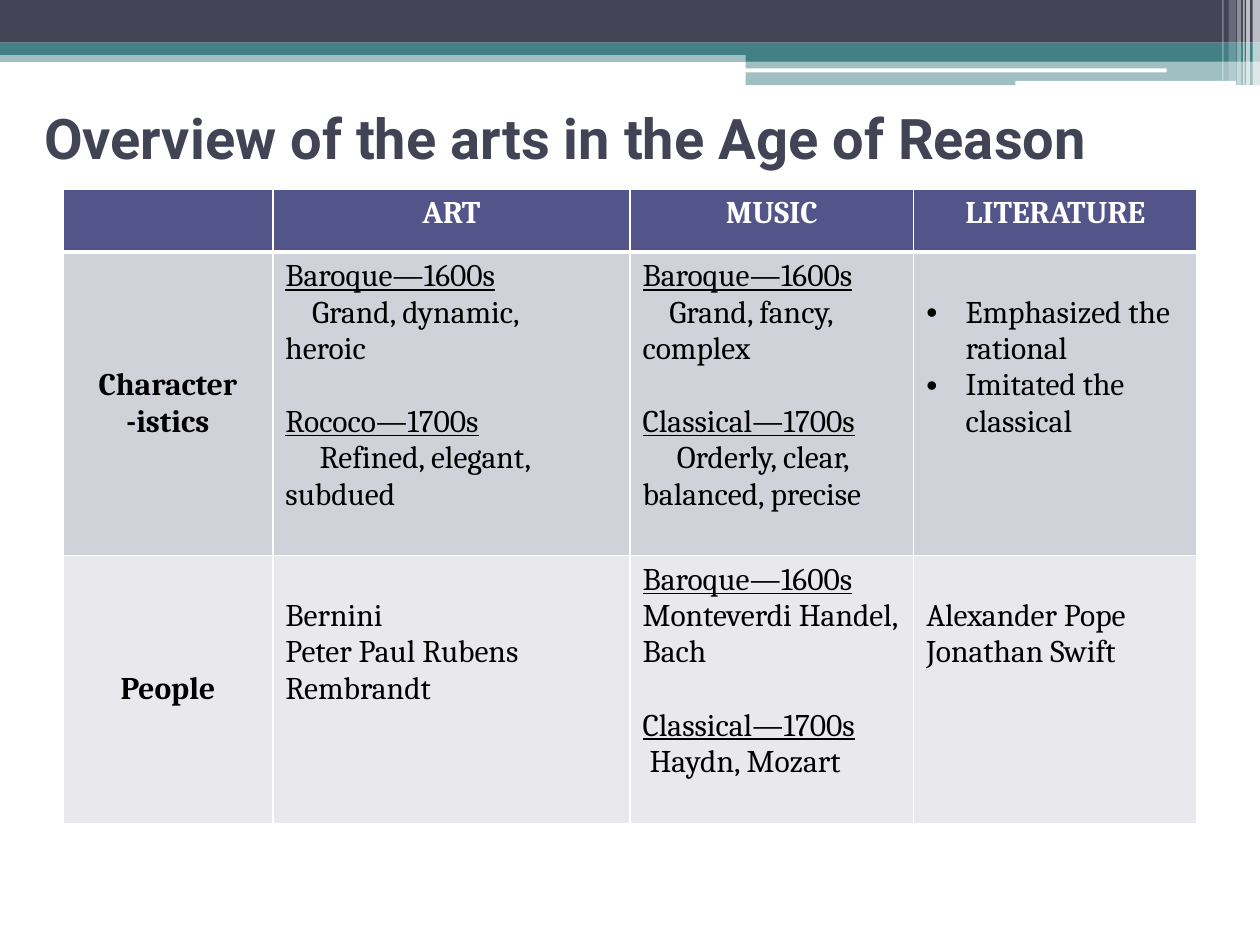
from dataclasses import dataclass

from lxml.etree import SubElement as Sub
from pptx import Presentation as Deck
from pptx.dml.color import RGBColor as Rgb
from pptx.enum.shapes import MSO_SHAPE as Shape
from pptx.enum.text import MSO_ANCHOR as Anchor, PP_ALIGN as Align
from pptx.oxml.ns import qn
from pptx.util import Cm, Pt


@dataclass(frozen=True)
class Theme:
    dark: str = "424456"
    teal: str = "438086"
    head: str = "53548A"
    band: str = "D1D1DA"
    pale: str = "E9E9ED"
    white: str = "FFFFFF"
    black: str = "000000"
    sans: str = "Roboto"
    serif: str = "Cambria"
    big: int = 32
    body: int = 18
    gap: int = 21


@dataclass(frozen=True)
class Para:
    text: str
    under: bool = False
    gap: bool = False
    first: float = 0
    dot: bool = False


@dataclass(frozen=True)
class Box:
    paras: tuple = ()
    bold: bool = False
    drop: bool = False


class Maker:
    """Draw each kind of element on the current slide in one style."""

    def __init__(self, theme, slide):
        self.theme = theme
        self.slide = slide

    def bar(self, x, y, w, h, tint, alpha=100, form=Shape.RECTANGLE):
        bar = self.slide.shapes.add_shape(form, Cm(x), Cm(y), Cm(w), Cm(h))
        bar.shadow.inherit = False
        bar.line.fill.background()
        bar.fill.solid()
        bar.fill.fore_color.rgb = Rgb.from_string(tint)
        if alpha < 100:
            hue = bar.fill._xPr.find(".//" + qn("a:srgbClr"))
            Sub(hue, qn("a:alpha"), val=str(alpha * 1000))

    def words(self, para, text, face, size, tint, bold=False, under=False):
        for i, line in enumerate(text.split("\n")):
            if i:
                para.add_line_break()
            run = para.add_run()
            run.text = line
            font = run.font
            font.name, font.size = face, Pt(size)
            font.bold, font.underline = bold, under
            font.color.rgb = Rgb.from_string(tint)

    def title(self, x, y, w, h, text):
        frame = self.slide.shapes.add_textbox(Cm(x), Cm(y), Cm(w), Cm(h)).text_frame
        frame.word_wrap = True
        frame.vertical_anchor = Anchor.MIDDLE
        look = self.theme
        self.words(frame.paragraphs[0], text, look.sans, look.big, look.dark, True)

    def edge(self, cell, top, base):
        props = cell._tc.get_or_add_tcPr()
        for side, width in (("L", 1), ("R", 1), ("T", top), ("B", base)):
            line = Sub(props, qn("a:ln" + side), w=str(Pt(width)))
            Sub(Sub(line, qn("a:solidFill")), qn("a:srgbClr"), val=self.theme.white)

    def cell(self, cell, box, fill, tint):
        look = self.theme
        cell.fill.solid()
        cell.fill.fore_color.rgb = Rgb.from_string(fill)
        if box.drop:
            cell.margin_top = Cm(0.86)
        if box.bold and tint == look.black:
            cell.vertical_anchor = Anchor.MIDDLE
        frame = cell.text_frame
        for i, item in enumerate(box.paras):
            para = frame.add_paragraph() if i else frame.paragraphs[0]
            props = para._p.get_or_add_pPr()
            if item.dot:
                props.set("marL", str(Cm(0.79)))
                props.set("indent", str(Cm(-0.79)))
                Sub(props, qn("a:buFont"), typeface="Arial")
                Sub(props, qn("a:buChar"), char="•")
            elif item.first:
                props.set("indent", str(Cm(item.first)))
            if item.gap:
                para.space_before = Pt(look.gap)
            para.alignment = Align.CENTER if box.bold else Align.LEFT
            self.words(para, item.text, look.serif, look.body, tint, box.bold, item.under)

    def table(self, x, y, wide, high, rows):
        look = self.theme
        frame = self.slide.shapes.add_table(
            len(high), len(wide), Cm(x), Cm(y), Cm(sum(wide)), Cm(sum(high)))
        grid = frame.table
        grid.horz_banding = False
        for col, w in zip(grid.columns, wide):
            col.width = Cm(w)
        fills = (look.head, look.band, look.pale)
        for r, (row, h, boxes) in enumerate(zip(grid.rows, high, rows)):
            row.height = Cm(h)
            for cell, box in zip(row.cells, boxes):
                self.edge(cell, 3 if r == 1 else 1, 1 if r else 3)
                self.cell(cell, box, fills[r], look.black if r else look.white)


def label(*lines):
    return Box(tuple(Para(line) for line in lines), bold=True)


def names(*lines, dot=False):
    return Box(tuple(Para(line, dot=dot) for line in lines), drop=True)


def eras(*pairs):
    paras = []
    for i, (era, text, first) in enumerate(pairs):
        paras += [Para(era, under=True, gap=i > 0), Para(text, first=first)]
    return Box(tuple(paras))


def main():
    deck = Deck()
    deck.slide_width, deck.slide_height = Cm(25.4), Cm(19.05)
    look = Theme()
    make = Maker(look, deck.slides.add_slide(deck.slide_layouts[6]))

    for y, h, tint, alpha in (
        (1.02, 0.23, look.teal, 50),
        (0, 0.86, look.dark, 100),
        (0.86, 0.25, look.teal, 100),
    ):
        make.bar(0, y, 25.4, h, tint, alpha)
    make.bar(15.03, 0.99, 10.37, 0.25, look.teal)
    make.bar(15.03, 1.23, 10.37, 0.49, look.teal, 50)
    make.bar(15.01, 1.38, 8.51, 0.08, look.white, form=Shape.ROUNDED_RECTANGLE)
    make.bar(20.47, 1.63, 4.45, 0.1, look.white, form=Shape.ROUNDED_RECTANGLE)
    for x, w, h, alpha in (
        (25.25, 0.15, 1.73, 65),
        (25.12, 0.08, 1.73, 65),
        (25.06, 0.03, 1.73, 60),
        (24.94, 0.08, 1.73, 40),
        (24.77, 0.15, 1.63, 20),
        (24.64, 0.03, 1.63, 30),
    ):
        make.bar(x, 0, w, h, look.white, alpha)

    make.title(0.64, 1.27, 23.5, 2.97, "Overview of the arts in the Age of Reason")
    make.table(1.27, 3.81, (4.23, 7.2, 5.72, 5.71), (1.27, 6.12, 5.41), (
        (Box(), label("ART"), label("MUSIC"), label("LITERATURE")),
        (
            label("Character", "-istics"),
            eras(("Baroque—1600s", "Grand, dynamic,\nheroic", 0.54),
                 ("Rococo—1700s", "Refined, elegant, subdued", 0.69)),
            eras(("Baroque—1600s", "Grand, fancy, complex", 0.54),
                 ("Classical—1700s", "Orderly, clear, balanced, precise", 0.69)),
            names("Emphasized the rational", "Imitated the classical", dot=True),
        ),
        (
            label("People"),
            names("Bernini", "Peter Paul Rubens", "Rembrandt"),
            eras(("Baroque—1600s", "Monteverdi Handel, Bach", 0),
                 ("Classical—1700s", "Haydn, Mozart", 0.14)),
            names("Alexander Pope", "Jonathan Swift"),
        ),
    ))
    deck.save("out.pptx")


if __name__ == "__main__":
    main()
